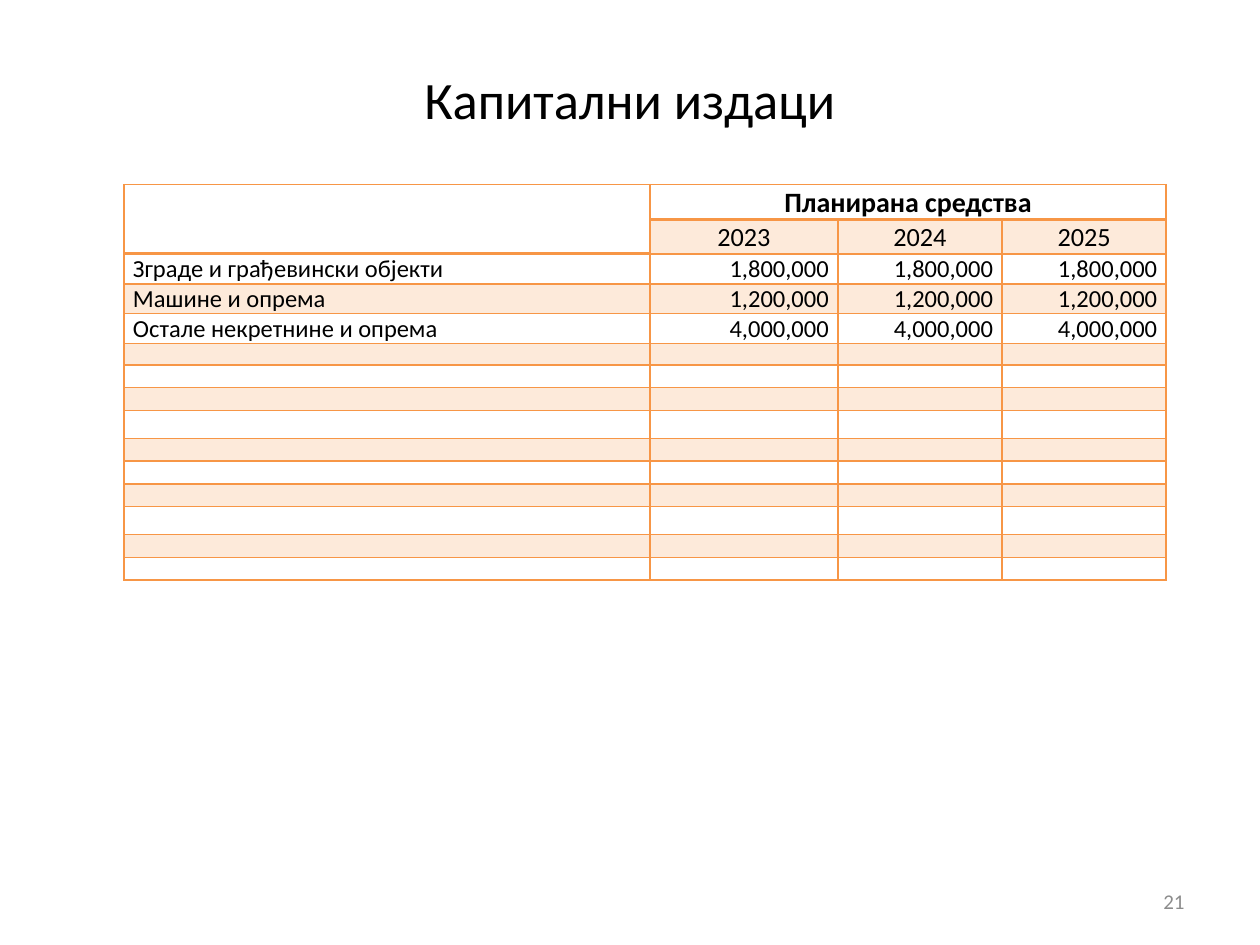
from dataclasses import dataclass
from lxml.etree import SubElement as Sub
from pptx import Presentation
from pptx.dml.color import RGBColor as Rgb
from pptx.enum.text import MSO_ANCHOR as Anchor, PP_ALIGN as Align
from pptx.oxml.ns import qn
from pptx.util import Cm, Pt


@dataclass(frozen=True)
class Theme:
    font: str = "Calibri"
    ink: str = "000000"
    grey: str = "8C8C8C"
    line: str = "F79646"
    tint: int = 20
    title: int = 30
    head: int = 16
    year: int = 15
    body: int = 14
    note: int = 12
    bare: int = 8
    thin: int = 1
    thick: int = 2


LOOK = Theme()
COLS = [10.6, 3.79, 3.31, 3.31]
ROWS = [0.71, 0.69] + [0.6] * 3 + [0.43] + [0.46, 0.46, 0.56, 0.46] * 2 + [0.46]
YEARS = ["2023", "2024", "2025"]
ITEMS = [
    ("Зграде и грађевински објекти", "1,800,000"),
    ("Машине и опрема", "1,200,000"),
    ("Остале некретнине и опрема", "4,000,000"),
]


def write(frame, text, size, align, color=LOOK.ink, bold=False):
    para = frame.paragraphs[0]
    para.alignment = align
    run = para.add_run()
    run.text = text
    font = run.font
    font.name, font.size, font.bold = LOOK.font, Pt(size), bold
    font.color.rgb = Rgb.from_string(color)


def add_text(slide, box, text, size, align, color=LOOK.ink):
    frame = slide.shapes.add_textbox(*map(Cm, box)).text_frame
    frame.word_wrap = True
    frame.vertical_anchor = Anchor.MIDDLE
    write(frame, text, size, align, color)


def paint(node, color, alpha=100):
    fill = Sub(node, qn("a:solidFill"))
    tone = Sub(fill, qn("a:srgbClr"), val=color)
    if alpha < 100:
        Sub(tone, qn("a:alpha"), val=str(alpha * 1000))


def style(cell, tint, base):
    cell.margin_left = cell.margin_right = Cm(0.18)
    cell.margin_top = cell.margin_bottom = 0
    props = cell._tc.get_or_add_tcPr()
    for side in "LRTB":
        width = base if side == "B" else LOOK.thin
        edge = Sub(props, qn(f"a:ln{side}"), w=str(Pt(width)))
        paint(edge, LOOK.line)
    if tint:
        paint(props, LOOK.line, LOOK.tint)
    else:
        cell.fill.background()


def fill_cell(cell, text, size, align, anchor, bold=False):
    cell.vertical_anchor = anchor
    write(cell.text_frame, text, size, align, bold=bold)


def shrink(cell):
    para = cell.text_frame.paragraphs[0]
    Sub(para._p, qn("a:endParaRPr"), sz=str(LOOK.bare * 100))


def add_grid(slide):
    size = sum(COLS), sum(ROWS)
    frame = slide.shapes.add_table(
        len(ROWS), len(COLS), Cm(2.5), Cm(3.72), *map(Cm, size))
    grid = frame.table
    grid.first_row = grid.horz_banding = False
    for col, width in zip(grid.columns, COLS):
        col.width = Cm(width)
    for row, height in zip(grid.rows, ROWS):
        row.height = Cm(height)

    for r in range(len(ROWS)):
        for c in range(len(COLS)):
            head = r == 0 or (r == 1 and c == 0)
            tint = r % 2 == 1 and not head
            style(grid.cell(r, c), tint, LOOK.thick if head else LOOK.thin)
    grid.cell(0, 0).merge(grid.cell(1, 0))
    grid.cell(0, 1).merge(grid.cell(0, 3))

    fill_cell(grid.cell(0, 1), "Планирана средства", LOOK.head,
              Align.CENTER, Anchor.BOTTOM, True)
    for c, year in enumerate(YEARS, 1):
        fill_cell(grid.cell(1, c), year, LOOK.year, Align.CENTER, Anchor.BOTTOM)
    for r, (name, sum_) in enumerate(ITEMS, 2):
        fill_cell(grid.cell(r, 0), name, LOOK.body, Align.LEFT, Anchor.MIDDLE)
        for c in range(1, len(COLS)):
            fill_cell(grid.cell(r, c), sum_, LOOK.body, Align.RIGHT, Anchor.MIDDLE)
    for cell in grid.iter_cells():
        if not cell.text:
            shrink(cell)


def main():
    deck = Presentation()
    deck.slide_width, deck.slide_height = Cm(25.4), Cm(19.05)
    slide = deck.slides.add_slide(deck.slide_layouts[6])
    add_grid(slide)
    add_text(slide, (18.21, 17.65, 5.92, 1.02), "21", LOOK.note,
             Align.RIGHT, LOOK.grey)
    add_text(slide, (1.27, 0.76, 22.86, 2.44), "Капитални издаци",
             LOOK.title, Align.CENTER)
    deck.save("out.pptx")


if __name__ == "__main__":
    main()
